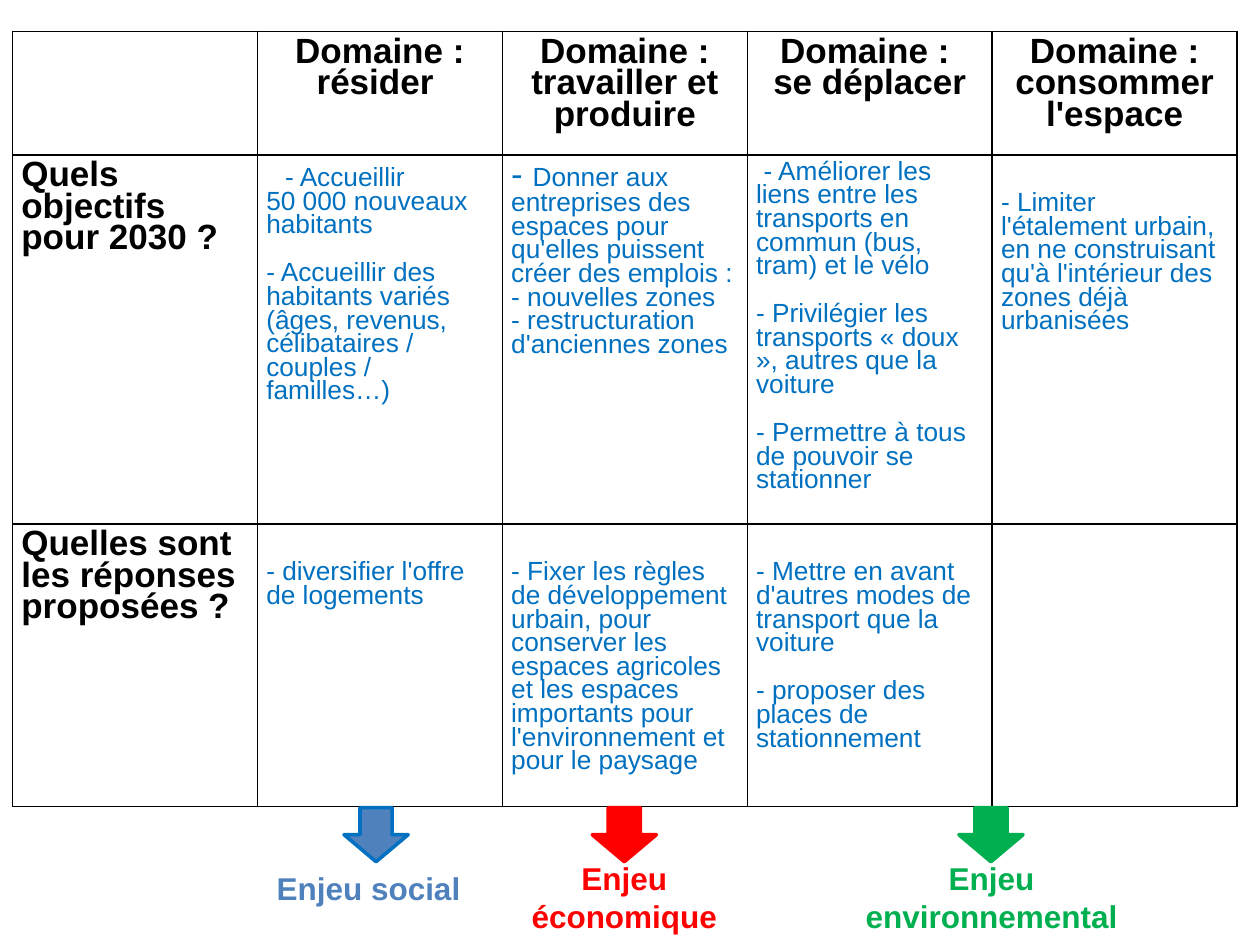
from typing import NamedTuple

from lxml.etree import SubElement as Sub
from pptx import Presentation
from pptx.dml.color import RGBColor as Rgb
from pptx.enum.shapes import MSO_SHAPE as Shape
from pptx.enum.text import PP_ALIGN as Align
from pptx.oxml.ns import qn
from pptx.util import Inches, Pt

HUES = {
    "black": "000000", "white": "FFFFFF", "text": "0070C0",
    "social": "4F81BD", "money": "FF0000", "green": "00B050",
}
HEAD = {"name": "Arial", "size": Pt(20), "bold": True}
BODY = {"name": "Arial", "size": Pt(15), "bold": False}
LABEL = {"name": "Arial", "size": Pt(18), "bold": True}
GAP = 14  # points, one line of body text
LOW = 0.3  # top margin, in inches, of cells that start one line down
ROWS = [0.98, 2.93, 2.24]


class Para(NamedTuple):
    text: str
    gap: float = 0
    indent: float = 0
    lead: str = ""  # opening characters in the heading size


class Cell(NamedTuple):
    paras: list[Para]
    top: float = 0.05


class Stake(NamedTuple):
    text: str
    hue: str
    line: str
    arrow: float
    left: float
    top: float
    width: float
    height: float


GRID = [
    [
        Cell([]),
        Cell([Para("Domaine : résider ")]),
        Cell([Para("Domaine : travailler et produire")]),
        Cell([Para("Domaine : "), Para("se déplacer")]),
        Cell([Para("Domaine : consommer l'espace")]),
    ],
    [
        Cell([Para("Quels"), Para("objectifs pour 2030 ?")]),
        Cell([
            Para("- Accueillir", indent=0.15),
            Para("50 000 nouveaux habitants"),
            Para("- Accueillir des habitants variés (âges, revenus, "
                 "célibataires / couples / familles…)", GAP),
        ], 0.1),
        Cell([
            Para("Donner aux entreprises des espaces pour", lead="- "),
            Para("qu'elles puissent créer des emplois :"),
            Para("- nouvelles zones"),
            Para("- restructuration d'anciennes zones"),
        ]),
        Cell([
            Para("- Améliorer les liens entre les", indent=0.06),
            Para("transports en commun (bus, tram) et le vélo"),
            Para("- Privilégier les transports « doux », "
                 "autres que la voiture", GAP),
            Para("- Permettre à tous de pouvoir se stationner", GAP),
        ]),
        Cell([Para("- Limiter l'étalement urbain, en ne construisant "
                   "qu'à l'intérieur des zones déjà urbanisées")], LOW),
    ],
    [
        Cell([Para("Quelles sont les réponses proposées ?")]),
        Cell([Para("- diversifier l'offre de logements")], LOW),
        Cell([Para("- Fixer les règles de développement urbain, pour "
                   "conserver les espaces agricoles et les espaces "
                   "importants pour l'environnement et pour le paysage")],
             LOW),
        Cell([
            Para("- Mettre en avant d'autres modes de transport "
                 "que la voiture"),
            Para("- proposer des places de stationnement", GAP),
        ], LOW),
        Cell([]),
    ],
]

STAKES = [
    Stake("Enjeu social", "social", "text", 2.73, 2.08, 6.85, 1.69, 0.4),
    Stake("Enjeu économique", "money", "money", 4.7, 4.07, 6.77, 1.77, 0.7),
    Stake("Enjeu environnemental", "green", "green",
          7.61, 6.67, 6.77, 2.4, 0.7),
]


def color(hue: str) -> Rgb:
    return Rgb.from_string(HUES[hue])


def add_run(para, text: str, form: dict, hue: str) -> None:
    run = para.add_run()
    run.text = text
    for key, value in form.items():
        setattr(run.font, key, value)
    run.font.color.rgb = color(hue)


def add_edges(cell) -> None:
    """Draw a thin black line on all four sides of a cell."""
    props = cell._tc.get_or_add_tcPr()
    for spot, side in enumerate(("lnL", "lnR", "lnT", "lnB")):
        edge = props.makeelement(qn(f"a:{side}"), {"w": str(Pt(0.96))})
        fill = Sub(edge, qn("a:solidFill"))
        Sub(fill, qn("a:srgbClr"), val=HUES["black"])
        props.insert(spot, edge)


def fill_cell(cell, data: Cell, top: bool, side: bool) -> None:
    """Write one cell; the top row and the side column are headings."""
    form, hue = (HEAD, "black") if top or side else (BODY, "text")
    cell.fill.solid()
    cell.fill.fore_color.rgb = color("white")
    add_edges(cell)
    cell.margin_left = cell.margin_right = Inches(0.07)
    cell.margin_top, cell.margin_bottom = Inches(data.top), Inches(0.05)
    frame = cell.text_frame
    for spot, item in enumerate(data.paras):
        para = frame.add_paragraph() if spot else frame.paragraphs[0]
        para.alignment = Align.CENTER if top else Align.LEFT
        para.line_spacing = 0.81
        para.space_before = Pt(item.gap)
        if item.indent:
            para._p.get_or_add_pPr().set("indent", str(Inches(item.indent)))
        if item.lead:
            add_run(para, item.lead, BODY | {"size": HEAD["size"]}, hue)
        add_run(para, item.text, form, hue)


def add_grid(slide) -> None:
    table = slide.shapes.add_table(
        len(GRID), len(GRID[0]), Inches(0.1), Inches(0.25),
        Inches(9.72), Inches(sum(ROWS))).table
    table.first_row = table.horz_banding = False
    for row, height in enumerate(ROWS):
        table.rows[row].height = Inches(height)
        for col, data in enumerate(GRID[row]):
            fill_cell(table.cell(row, col), data, row == 0, col == 0)


def add_label(slide, stake: Stake) -> None:
    box = slide.shapes.add_textbox(
        Inches(stake.left), Inches(stake.top),
        Inches(stake.width), Inches(stake.height))
    box.text_frame.word_wrap = True
    para = box.text_frame.paragraphs[0]
    para.alignment = Align.CENTER
    add_run(para, stake.text, LABEL, stake.hue)


def add_arrow(slide, stake: Stake) -> None:
    arrow = slide.shapes.add_shape(
        Shape.DOWN_ARROW, Inches(stake.arrow), Inches(6.41),
        Inches(0.51), Inches(0.43))
    arrow.shadow.inherit = False
    arrow.fill.solid()
    arrow.fill.fore_color.rgb = color(stake.hue)
    arrow.line.color.rgb = color(stake.line)
    arrow.line.width = Pt(2)


def main() -> None:
    deck = Presentation()
    deck.slide_width, deck.slide_height = Inches(10), Inches(7.5)
    slide = deck.slides.add_slide(deck.slide_layouts[6])
    add_grid(slide)
    for stake in STAKES:
        add_label(slide, stake)
        add_arrow(slide, stake)
    deck.save("out.pptx")


if __name__ == "__main__":
    main()
